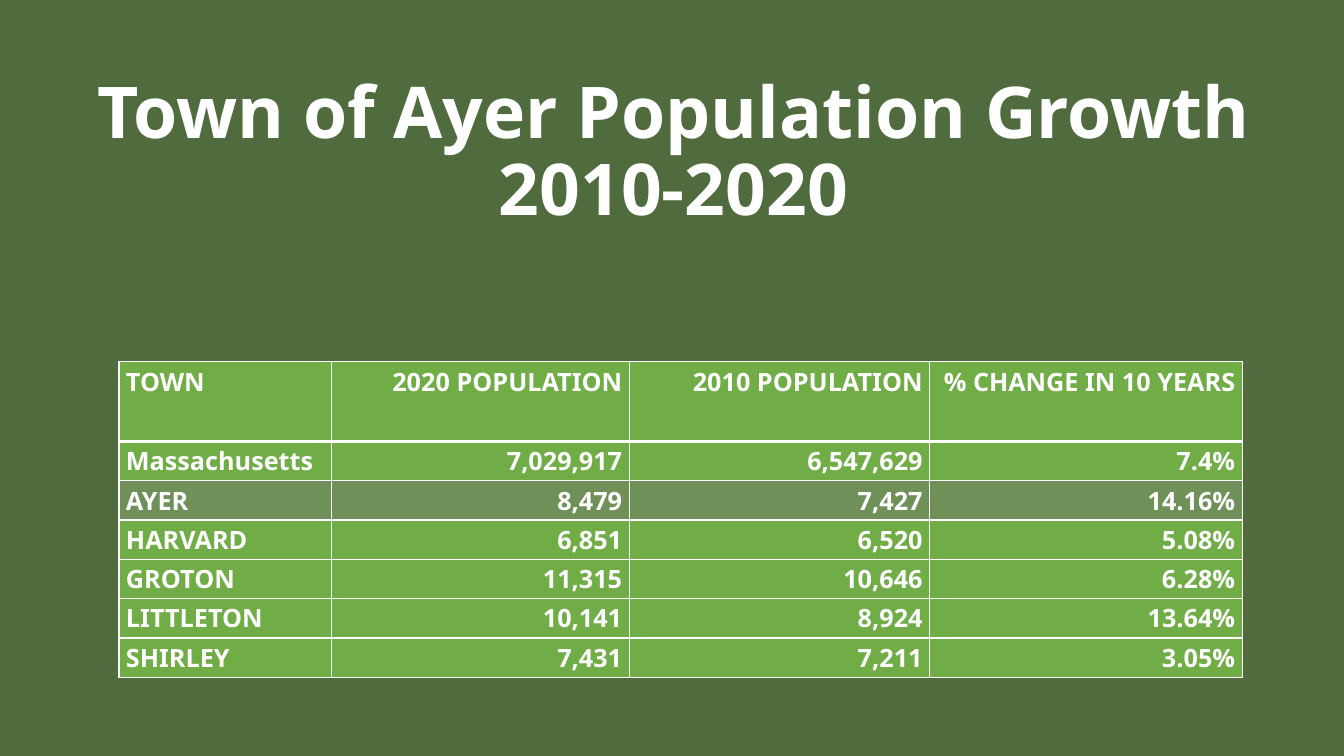
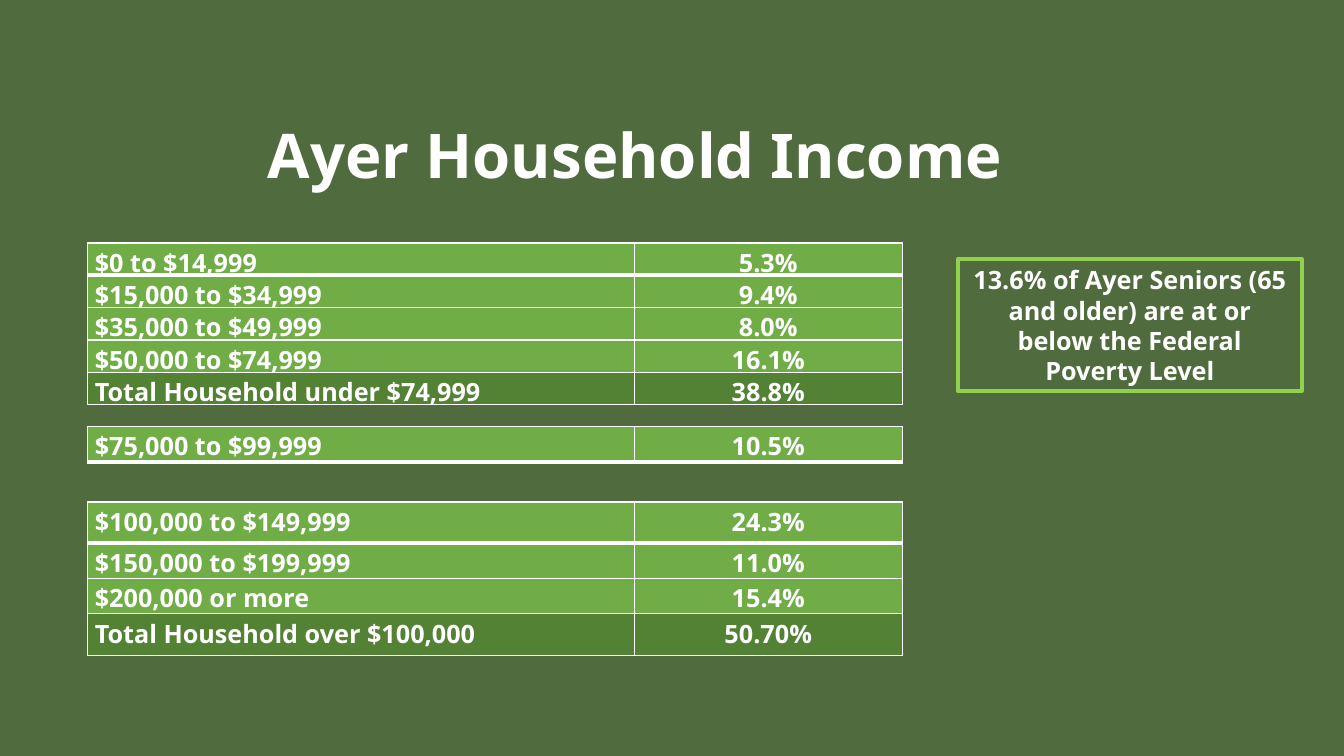
from dataclasses import dataclass

from lxml import etree
from pptx import Presentation
from pptx.dml.color import RGBColor
from pptx.enum.shapes import MSO_SHAPE
from pptx.enum.text import MSO_ANCHOR, PP_ALIGN
from pptx.oxml.ns import qn
from pptx.util import Inches, Pt

LEFT, CENTER, RIGHT = PP_ALIGN.LEFT, PP_ALIGN.CENTER, PP_ALIGN.RIGHT
TOP, MIDDLE, BOTTOM = MSO_ANCHOR.TOP, MSO_ANCHOR.MIDDLE, MSO_ANCHOR.BOTTOM
RECT = MSO_SHAPE.RECTANGLE


@dataclass(frozen=True)
class Theme:
    font: str = "Noto Sans"
    back: str = "506B3D"
    text: str = "FFFFFF"
    row: str = "70AD47"
    focus: str = "70905A"
    total: str = "548235"
    frame: str = "92D050"
    cover: float = 51
    title: float = 44
    body: float = 18
    thin: float = 1
    thick: float = 3


THEME = Theme()

GROWTH = [
    ("TOWN", "2020 POPULATION", "2010 POPULATION", "% CHANGE IN 10 YEARS"),
    ("Massachusetts", "7,029,917", "6,547,629", "7.4%"),
    ("AYER", "8,479", "7,427", "14.16%"),
    ("HARVARD", "6,851", "6,520", "5.08%"),
    ("GROTON", "11,315", "10,646", "6.28%"),
    ("LITTLETON", "10,141", "8,924", "13.64%"),
    ("SHIRLEY", "7,431", "7,211", "3.05%"),
]
LOWER = [
    ("$0 to $14,999", "5.3%"),
    ("$15,000 to $34,999", "9.4%"),
    ("$35,000 to $49,999", "8.0%"),
    ("$50,000 to $74,999", "16.1%"),
    ("Total Household under $74,999", "38.8%"),
]
MIDDLING = [("$75,000 to $99,999", "10.5%")]
UPPER = [
    ("$100,000 to $149,999", "24.3%"),
    ("$150,000 to $199,999", "11.0%"),
    ("$200,000 or more", "15.4%"),
    ("Total Household over $100,000", "50.70%"),
]


def rgb(code):
    return RGBColor.from_string(code)


def new_slide(deck):
    slide = deck.slides.add_slide(deck.slide_layouts[6])
    fill = slide.background.fill
    fill.solid()
    fill.fore_color.rgb = rgb(THEME.back)
    return slide


def write(frame, text, size, align, spacing=None):
    para = frame.paragraphs[0]
    para.text = text
    para.alignment = align
    para.line_spacing = spacing
    font = para.font
    font.name, font.size, font.bold = THEME.font, Pt(size), True
    font.color.rgb = rgb(THEME.text)


def add_title(slide, box, text, size, anchor=TOP, wrap=True, spacing=None, foot=0.05):
    """Place a heading; foot is the space kept free below its last line."""
    frame = slide.shapes.add_textbox(*map(Inches, box)).text_frame
    frame.word_wrap = wrap
    frame.vertical_anchor = anchor
    frame.margin_bottom = Inches(foot)
    write(frame, text, size, CENTER, spacing)


def add_edges(cell, top, bottom):
    props = cell._tc.get_or_add_tcPr()
    widths = {"lnL": THEME.thin, "lnR": THEME.thin, "lnT": top, "lnB": bottom}
    for spot, (tag, width) in enumerate(widths.items()):
        line = etree.Element(qn(f"a:{tag}"), w=str(Pt(width)))
        fill = etree.SubElement(line, qn("a:solidFill"))
        etree.SubElement(fill, qn("a:srgbClr"), val=THEME.text)
        props.insert(spot, line)


def add_grid(slide, left, top, widths, heights, rows, align, marks=None):
    """Draw a table with a heavy rule under its first row; marks recolours rows."""
    marks = marks or {}
    box = (left, top, sum(widths), sum(heights))
    table = slide.shapes.add_table(len(rows), len(widths), *map(Inches, box)).table
    table.first_row = table.horz_banding = False
    for column, width in zip(table.columns, widths):
        column.width = Inches(width)
    for i, (height, values) in enumerate(zip(heights, rows)):
        table.rows[i].height = Inches(height)
        for j, value in enumerate(values):
            cell = table.cell(i, j)
            cell.margin_left = cell.margin_right = Inches(0.07)
            cell.margin_top = cell.margin_bottom = 0
            cell.fill.solid()
            cell.fill.fore_color.rgb = rgb(marks.get(i, THEME.row))
            add_edges(
                cell,
                top=THEME.thick if i == 1 else THEME.thin,
                bottom=THEME.thick if i == 0 else THEME.thin,
            )
            write(cell.text_frame, value, THEME.body, align if j else LEFT, 1.07)


def add_callout(slide, box, text):
    shape = slide.shapes.add_shape(RECT, *map(Inches, box))
    shape.shadow.inherit = False
    shape.fill.background()
    shape.line.color.rgb = rgb(THEME.frame)
    shape.line.width = Pt(THEME.thick)
    frame = shape.text_frame
    frame.word_wrap = True
    frame.vertical_anchor = MIDDLE
    write(frame, text, THEME.body, CENTER)


def growth_slide(deck):
    slide = new_slide(deck)
    add_title(slide, (0.61, 0.48, 12.14, 2.73), "Town of Ayer Population Growth 2010-2020",
              THEME.cover, anchor=BOTTOM, spacing=0.9, foot=0.92)
    add_grid(slide, 1.18, 3.59, [2.11, 2.95, 2.98, 3.1], [0.79] + [0.39] * 6,
             GROWTH, RIGHT, {2: THEME.focus})


def income_slide(deck):
    slide = new_slide(deck)
    add_title(slide, (2.44, 1.11, 7.72, 0.84), "Ayer Household Income",
              THEME.title, wrap=False)
    bands = [
        (2.41, [0.3] * 5, LOWER, {4: THEME.total}),
        (4.23, [0.35], MIDDLING, None),
        (4.98, [0.41, 0.35, 0.35, 0.41], UPPER, {3: THEME.total}),
    ]
    for top, heights, rows, marks in bands:
        add_grid(slide, 0.87, top, [5.42, 2.66], heights, rows, CENTER, marks)
    add_callout(slide, (9.5, 2.57, 3.41, 1.31),
                "13.6% of Ayer Seniors (65 and older) are at or below "
                "the Federal Poverty Level")


def main():
    deck = Presentation()
    deck.slide_width, deck.slide_height = Inches(13.33), Inches(7.5)
    growth_slide(deck)
    income_slide(deck)
    deck.save("out.pptx")


if __name__ == "__main__":
    main()
